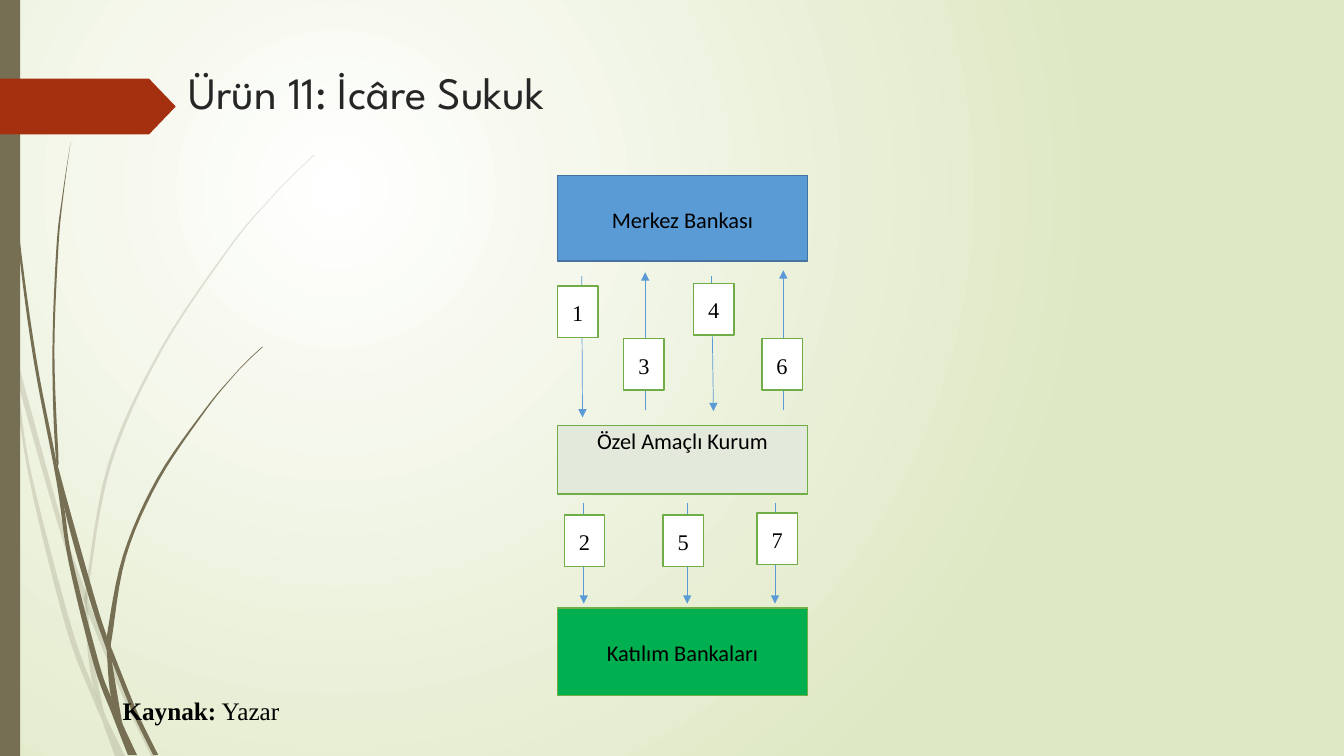
"""Build the slide that shows the steps of an ijara sukuk."""
from lxml.etree import SubElement
from pptx import Presentation
from pptx.dml.color import RGBColor
from pptx.enum.shapes import MSO_CONNECTOR, MSO_SHAPE
from pptx.enum.text import MSO_ANCHOR, PP_ALIGN
from pptx.oxml.ns import qn
from pptx.util import Cm, Pt


def paint(shape, fill, line=None):
    shape.shadow.inherit = False
    shape.fill.solid()
    shape.fill.fore_color.rgb = RGBColor.from_string(fill)
    if line:
        shape.line.color.rgb = RGBColor.from_string(line)
        shape.line.width = Pt(1)
    else:
        shape.line.fill.background()


def write(shape, words, font, size, color="000000", bold=False):
    span = shape.text_frame.paragraphs[0].add_run()
    span.text = words
    span.font.name = font
    span.font.size = Pt(size)
    span.font.bold = bold
    span.font.color.rgb = RGBColor.from_string(color)


deck = Presentation()
deck.slide_width, deck.slide_height = Cm(33.87), Cm(19.05)
page = deck.slides.add_slide(deck.slide_layouts[6])

backdrop = page.background.fill
backdrop.gradient()
for stop, color in zip(backdrop.gradient_stops, ("FFFFFF", "DFE8C4")):
    stop.color.rgb = RGBColor.from_string(color)
gradient = next(page.element.iter(qn("a:gradFill")))
gradient.remove(gradient.find(qn("a:lin")))
circle = SubElement(gradient, qn("a:path"), path="circle")
SubElement(circle, qn("a:fillToRect"), l="50000", t="50000", r="100000", b="100000")

# each blade: opacity, left edge downwards, right edge upwards
BLADE_UNIT = 0.0254
blades = [
    (20, [(0, 299), (10, 344), (11, 350), (28, 470), (65, 621), (92, 693), (101, 714), (114, 750)],
     [(124, 750), (105, 711), (93, 683), (70, 619), (31, 469), (17, 376), (9, 322), (0, 282)]),
    (20, [(14, 345), (17, 376), (58, 522), (84, 599), (88, 610), (123, 694), (150, 750)],
     [(155, 750), (127, 692), (92, 607), (85, 586), (62, 520), (14, 345)]),
    (20, [(312, 153), (289, 175), (268, 197), (228, 244), (158, 348), (107, 461), (85, 584),
          (84, 599), (87, 646), (93, 683), (105, 711)],
     [(103, 706), (91, 646), (88, 610), (88, 584), (110, 462), (160, 349), (229, 245),
      (268, 198), (290, 175), (312, 154)]),
    (100, [(3, 0), (4, 48), (7, 110), (17, 233), (33, 355), (56, 477), (68, 557), (93, 659),
           (111, 708), (127, 749)],
     [(136, 749), (122, 719), (110, 691), (98, 657), (72, 556), (64, 505), (55, 453),
      (36, 355), (19, 232), (8, 109), (5, 48), (4, 0)]),
    (100, [(70, 141), (62, 193), (56, 245), (52, 349), (55, 449), (64, 505), (88, 592),
           (106, 645), (111, 656), (132, 708), (152, 749)],
     [(157, 749), (136, 706), (113, 649), (106, 631), (93, 590), (60, 472), (58, 453),
      (54, 349), (58, 245), (63, 193), (70, 141)]),
    (100, [(260, 344), (245, 358), (231, 373), (204, 405), (156, 474), (122, 551), (106, 631),
           (106, 645), (110, 691), (122, 719)],
     [(121, 716), (111, 656), (110, 641), (111, 633), (125, 552), (158, 476), (205, 406),
      (231, 374), (245, 359), (261, 344)]),
]
for opacity, *edges in blades:
    outline = []
    for edge in edges:
        knots = [edge[0], *edge, edge[-1]]
        for before, start, end, after in zip(knots, knots[1:], knots[2:], knots[3:]):
            for step in range(6):
                t = step / 6
                outline.append(tuple(
                    Cm(BLADE_UNIT * (b + (c - a) * t / 2 + (2 * a - 5 * b + 4 * c - d) * t**2 / 2
                                     + (3 * b - a - 3 * c + d) * t**3 / 2))
                    for a, b, c, d in zip(before, start, end, after)))
        outline.append(tuple(Cm(BLADE_UNIT * value) for value in edge[-1]))
    builder = page.shapes.build_freeform(*outline[0])
    builder.add_line_segments(outline[1:], close=True)
    blade = builder.convert_to_shape()
    paint(blade, "766F54")
    tint = blade.element.spPr.find(qn("a:solidFill"))[0]
    SubElement(tint, qn("a:alpha"), val=str(opacity * 1000))

side_bar = page.shapes.add_shape(MSO_SHAPE.RECTANGLE, 0, 0, Cm(0.51), Cm(19.05))
paint(side_bar, "766F54")
title_tag = page.shapes.add_shape(MSO_SHAPE.PENTAGON, 0, Cm(1.98), Cm(4.43), Cm(1.41))
title_tag.adjustments[0] = 0.48
paint(title_tag, "A53010")

title = page.shapes.add_textbox(Cm(4.5), Cm(1.55), Cm(26), Cm(1.5))
title.text_frame.word_wrap = True
title.text_frame.vertical_anchor = MSO_ANCHOR.MIDDLE
write(title, "Ürün 11: İcâre Sukuk", "League Spartan", 32, "262626")

for start_x, start_y, end_x, end_y in [
    (14.66, 6.96, 14.68, 10.52), (14.71, 12.67, 14.71, 15.21), (16.26, 10.34, 16.26, 6.86),
    (17.93, 6.96, 17.98, 10.36), (17.32, 12.67, 17.32, 15.21), (19.74, 10.34, 19.74, 6.81),
    (19.53, 12.67, 19.53, 15.21),
]:
    arrow = page.shapes.add_connector(
        MSO_CONNECTOR.STRAIGHT, Cm(start_x), Cm(start_y), Cm(end_x), Cm(end_y))
    arrow.line.color.rgb = RGBColor.from_string("5B9BD5")
    arrow.line.width = Pt(0.5)
    SubElement(arrow.line._get_or_add_ln(), qn("a:tailEnd"), type="triangle")
    SubElement(arrow.element.spPr, qn("a:effectLst"))

GREEN = "70AD47"
parties = [
    ("Merkez Bankası", 14.05, 4.42, 6.3, 2.16, "5B9BD5", "43739E", "Calibri"),
    ("Özel Amaçlı Kurum", 14.05, 10.72, 6.3, 1.73, "E3E9DB", GREEN, "Calibri"),
    ("Katılım Bankaları", 14.05, 15.32, 6.3, 2.21, "00B050", GREEN, "Calibri"),
]
step_corners = [(14.05, 7.21), (14.22, 12.98), (15.72, 8.53), (17.48, 7.14),
                (16.71, 12.98), (19.2, 8.53), (19.08, 12.93)]
steps = [(str(number), left, top, 1.02, 1.3, "FFFFFF", GREEN, "Times New Roman")
         for number, (left, top) in enumerate(step_corners, 1)]
for words, left, top, width, height, fill, line, font in parties + steps:
    box = page.shapes.add_shape(MSO_SHAPE.RECTANGLE, Cm(left), Cm(top), Cm(width), Cm(height))
    paint(box, fill, line)
    frame = box.text_frame
    frame.vertical_anchor = MSO_ANCHOR.MIDDLE
    if words == "Özel Amaçlı Kurum":
        frame.vertical_anchor = MSO_ANCHOR.TOP
        frame.margin_top = 0
    para = frame.paragraphs[0]
    para.alignment = PP_ALIGN.CENTER
    para.line_spacing = 1.07
    write(box, words, font, 16)

source_note = page.shapes.add_textbox(Cm(2.84), Cm(17.35), Cm(4.5), Cm(1.09))
source_note.text_frame.word_wrap = False
source_note.text_frame.paragraphs[0].line_spacing = 1.07
write(source_note, "Kaynak:", "Times New Roman", 18, bold=True)
write(source_note, " Yazar", "Times New Roman", 18)

deck.save("out.pptx")
